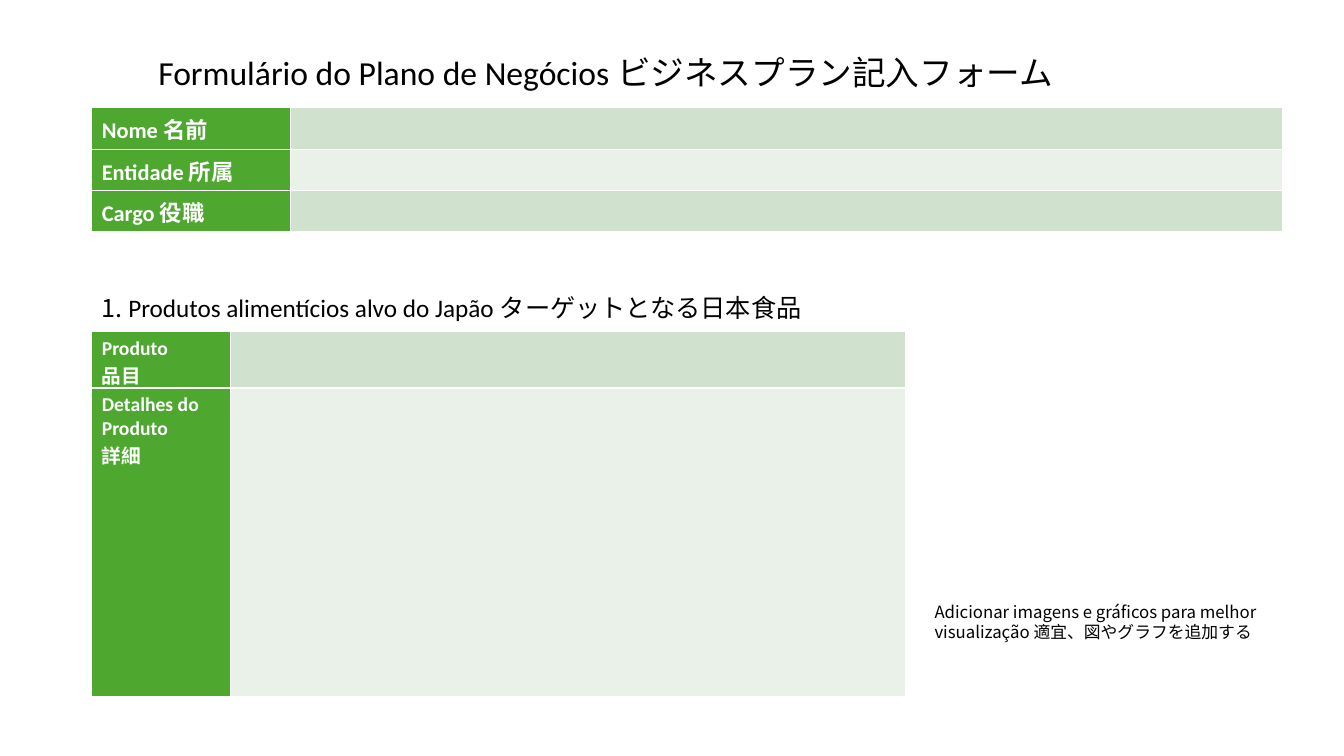
"""Build the bilingual business plan form slide."""
from dataclasses import dataclass

import lxml.etree
import pptx
import pptx.dml.color
import pptx.enum.text
import pptx.oxml.ns
import pptx.util

Inches = pptx.util.Inches
LATIN = "Calibri"
JAPANESE = "Noto Sans CJK JP"
COLORS = {
    "text": "000000",
    "white": "FFFFFF",
    "label": "4EA72E",
    "band_dark": "D0E1CD",
    "band_light": "E9F1E8",
}


@dataclass
class Span:
    text: str
    font: str


@dataclass
class Caption:
    left: float
    top: float
    width: float
    height: float
    size: int
    spans: list[Span]


@dataclass
class Form:
    left: float
    top: float
    widths: list[float]
    heights: list[float]
    size: int
    bottom_margin: float
    labels: list[str]


TITLE = Caption(1.47, 0.46, 9.64, 0.5, 24, [
    Span("Formulário do Plano de Negócios ", LATIN),
    Span("ビジネスプラン記入フォーム", JAPANESE),
])
CAPTIONS = [
    Caption(0.91, 2.85, 11.51, 0.4, 18, [
        Span("1. ", JAPANESE),
        Span("Produtos alimentícios alvo do Japão ", LATIN),
        Span("ターゲットとなる日本食品", JAPANESE),
    ]),
    Caption(9.17, 5.92, 3.55, 0.5, 12, [
        Span("Adicionar imagens e gráficos para melhor visualização "
             "適宜、図やグラフを追加する", JAPANESE),
    ]),
]
FORMS = [
    Form(0.91, 1.07, [1.97, 9.84], [0.41] * 3, 16, 0.05,
         ["Nome 名前", "Entidade 所属", "Cargo 役職"]),
    Form(0.91, 3.29, [1.38, 6.69], [0.56, 3.06], 14, 0,
         ["Produto\n品目", "Detalhes do Produto\n詳細"]),
]


def rgb(name: str) -> pptx.dml.color.RGBColor:
    """Return a palette colour."""
    return pptx.dml.color.RGBColor.from_string(COLORS[name])


def format_run(run, font: str, size: int, color: str, bold: bool = False) -> None:
    """Set the Latin and East Asian fonts, size, colour and weight of a run."""
    run.font.size = pptx.util.Pt(size)
    run.font.bold = bold
    run.font.color.rgb = rgb(color)
    run.font.name = font
    east_asian = lxml.etree.SubElement(run.font._element, pptx.oxml.ns.qn("a:ea"))
    east_asian.set("typeface", JAPANESE)


def fill_caption(box, caption: Caption) -> None:
    """Place a text shape and write its spans."""
    box.left, box.top = Inches(caption.left), Inches(caption.top)
    box.width, box.height = Inches(caption.width), Inches(caption.height)
    frame = box.text_frame
    frame.word_wrap = True
    frame.auto_size = pptx.enum.text.MSO_AUTO_SIZE.SHAPE_TO_FIT_TEXT
    frame.vertical_anchor = pptx.enum.text.MSO_ANCHOR.TOP
    para = frame.paragraphs[0]
    para.alignment = pptx.enum.text.PP_ALIGN.LEFT
    for span in caption.spans:
        run = para.add_run()
        run.text = span.text
        format_run(run, span.font, caption.size, "text")


def style_cell(cell, color: str) -> None:
    """Fill a cell and give it white one-point borders."""
    cell.fill.solid()
    cell.fill.fore_color.rgb = rgb(color)
    properties = cell._tc.get_or_add_tcPr()
    for index, side in enumerate(("lnL", "lnR", "lnT", "lnB")):
        border = lxml.etree.Element(pptx.oxml.ns.qn(f"a:{side}"), w=str(pptx.util.Pt(1)))
        solid = lxml.etree.SubElement(border, pptx.oxml.ns.qn("a:solidFill"))
        lxml.etree.SubElement(solid, pptx.oxml.ns.qn("a:srgbClr"), val=COLORS["white"])
        properties.insert(index, border)


def add_form(page, form: Form) -> None:
    """Add a table with labels on the left and blank banded cells."""
    table = page.shapes.add_table(
        len(form.heights), len(form.widths), Inches(form.left), Inches(form.top),
        Inches(sum(form.widths)), Inches(sum(form.heights))).table
    table.first_row = False
    table.first_col = True
    for column, width in zip(table.columns, form.widths):
        column.width = Inches(width)
    for index, (height, label) in enumerate(zip(form.heights, form.labels)):
        table.rows[index].height = Inches(height)
        label_cell, blank_cell = table.cell(index, 0), table.cell(index, 1)
        label_cell.text_frame.text = label
        label_cell.margin_bottom = Inches(form.bottom_margin)
        for para in label_cell.text_frame.paragraphs:
            format_run(para.runs[0], LATIN, form.size, "white", bold=True)
        style_cell(label_cell, "label")
        style_cell(blank_cell, "band_light" if index % 2 else "band_dark")


def main() -> None:
    """Build and save the deck."""
    deck = pptx.Presentation()
    deck.slide_width, deck.slide_height = Inches(13.33), Inches(7.5)
    page = deck.slides.add_slide(deck.slide_layouts[5])
    fill_caption(page.shapes.title, TITLE)
    for form in FORMS:
        add_form(page, form)
    for caption in CAPTIONS:
        box = page.shapes.add_textbox(0, 0, 0, 0)
        fill_caption(box, caption)
    deck.save("out.pptx")


if __name__ == "__main__":
    main()
